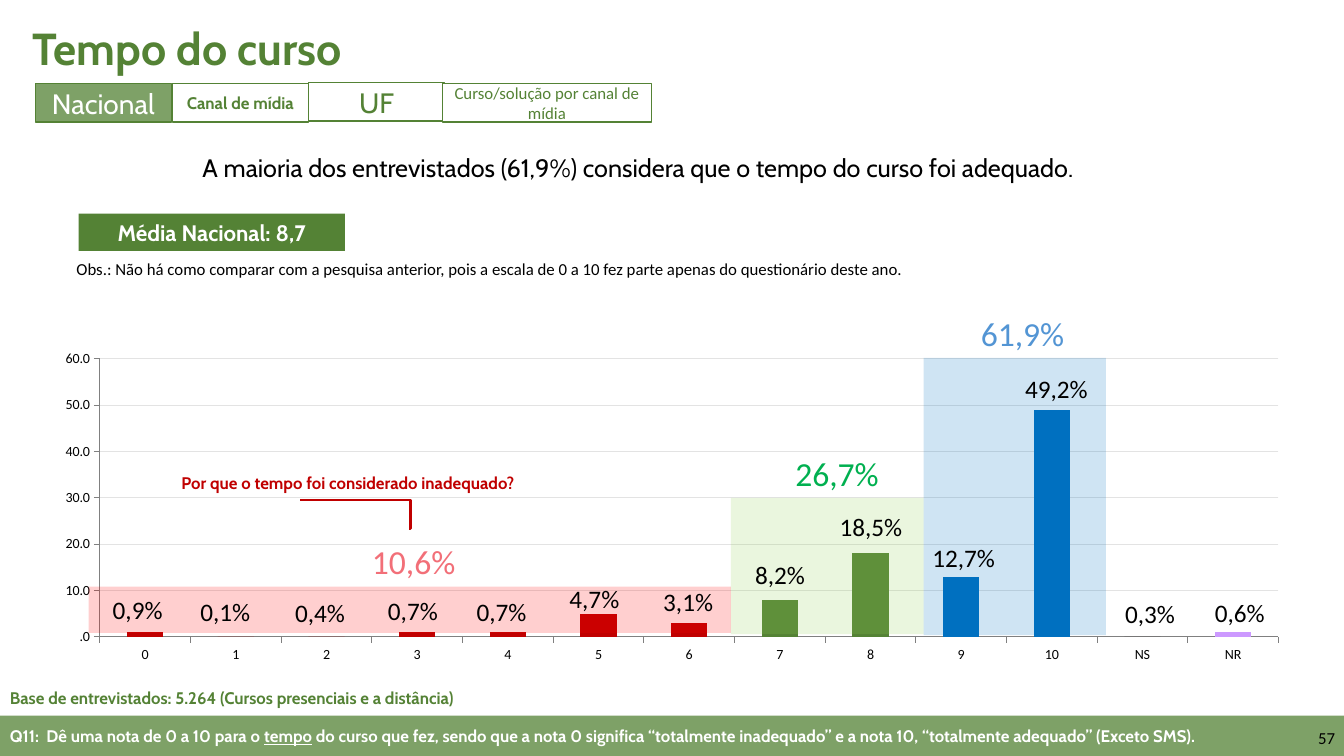
"""Build the slide on how respondents rated the length of the course."""
from lxml.etree import SubElement
from pptx import Presentation
from pptx.chart.data import CategoryChartData
from pptx.dml.color import RGBColor
from pptx.enum.chart import XL_CHART_TYPE, XL_TICK_MARK
from pptx.enum.shapes import MSO_CONNECTOR, MSO_SHAPE
from pptx.enum.text import MSO_ANCHOR, PP_ALIGN
from pptx.oxml import parse_xml
from pptx.oxml.ns import nsdecls, qn
from pptx.util import Emu, Pt

PX = 9144
BLACK = RGBColor(0x00, 0x00, 0x00)
WHITE = RGBColor(0xFF, 0xFF, 0xFF)
GREEN = RGBColor(0x54, 0x82, 0x35)
LIME = RGBColor(0x92, 0xD0, 0x50)
BRIGHT_GREEN = RGBColor(0x00, 0xB0, 0x50)
BLUE = RGBColor(0x00, 0x70, 0xC0)
SKY = RGBColor(0x53, 0x95, 0xD4)
RED = RGBColor(0xFF, 0x00, 0x00)
DARK_RED = RGBColor(0xC0, 0x00, 0x00)
PINK = RGBColor(0xF2, 0x6F, 0x78)
CHARCOAL = RGBColor(0x3B, 0x38, 0x38)
LILAC = RGBColor(0xCC, 0x99, 0xFF)
AXIS_GREY = RGBColor(0x80, 0x80, 0x80)
GRID_GREY = RGBColor(0xE3, 0xE3, 0xE3)

RATINGS = [
    ("0", 0.9, DARK_RED, 102, 585), ("1", 0.1, DARK_RED, 189, 587),
    ("2", 0.4, DARK_RED, 283, 588), ("3", 0.7, DARK_RED, 375, 586),
    ("4", 0.7, DARK_RED, 463, 587), ("5", 4.7, DARK_RED, 555, 574),
    ("6", 3.1, DARK_RED, 648, 577), ("7", 8.2, GREEN, 739, 550),
    ("8", 18.5, GREEN, 823, 502), ("9", 12.7, BLUE, 915, 533),
    ("10", 49.2, BLUE, 1007, 365), ("NS", 0.3, CHARCOAL, 1106, 589),
    ("NR", 0.6, LILAC, 1195, 588),
]
BANDS = [
    ((725, 494, 191, 135), LIME, "26,7%", (779, 444, 104, 50), BRIGHT_GREEN),
    ((916, 355, 181, 275), BLUE, "61,9%", (963, 306, 126, 50), SKY),
    ((88, 582, 637, 46), RED, "10,6%", (359, 532, 114, 50), PINK),
]
TABS = [
    ("Nacional", (35, 83, 135, 38), GREEN, 75, dict(size=20, color=WHITE)),
    ("UF", (306, 82, 135, 38), WHITE, 75, dict(size=20)),
    ("Canal de mídia", (171, 83, 135, 38), WHITE, 75, dict(size=12, bold=True)),
    ("Curso/solução por canal de mídia", (439, 83, 207, 38), WHITE, 100,
     dict(size=12, font="Calibri")),
]


def emu(*lengths):
    """Turn px lengths into EMU."""
    return [Emu(length * PX) for length in lengths]


def write(frame, text, size=12, color=BLACK, font="Cabin", bold=False,
          align=PP_ALIGN.LEFT, anchor=MSO_ANCHOR.TOP, wrap=True, underlined=None):
    """Fill a text frame, underlining one word where asked."""
    frame.word_wrap = wrap
    frame.vertical_anchor = anchor
    paragraph = frame.paragraphs[0]
    paragraph.alignment = align
    before, word, after = text.partition(underlined) if underlined else (text, "", "")
    for part in filter(None, (before, word, after)):
        run = paragraph.add_run()
        run.text = part
        run.font.size = Pt(size)
        run.font.name = font
        run.font.bold = bold
        run.font.color.rgb = color
        if part == underlined:
            run.font.underline = True


def add_text(slide, text, box, **text_format):
    """Add a text box."""
    write(slide.shapes.add_textbox(*emu(*box)).text_frame, text, **text_format)


def add_box(slide, box, fill, opacity=100, border=None):
    """Add a filled rectangle and return it."""
    rectangle = slide.shapes.add_shape(MSO_SHAPE.RECTANGLE, *emu(*box))
    rectangle.shadow.inherit = False
    rectangle.fill.solid()
    rectangle.fill.fore_color.rgb = fill
    if opacity < 100:
        tint = rectangle.fill._xPr.find(".//" + qn("a:srgbClr"))
        SubElement(tint, qn("a:alpha"), val=str(opacity * 1000))
    if border:
        rectangle.line.color.rgb = border
        rectangle.line.width = Pt(1)
    else:
        rectangle.line.fill.background()
    return rectangle


def add_elbow(slide, start, end, color, bend):
    """Add an elbow connector that turns at the given share of its width."""
    elbow = slide.shapes.add_connector(MSO_CONNECTOR.ELBOW, *emu(*start, *end))
    elbow.line.color.rgb = color
    elbow.line.width = Pt(2)
    properties = elbow._element.spPr
    SubElement(properties, qn("a:effectLst"))
    adjustments = properties.find(qn("a:prstGeom")).get_or_add_avLst()
    SubElement(adjustments, qn("a:gd"), name="adj1", fmla=f"val {round(bend * 100000)}")


def add_ratings_chart(slide, box):
    """Add the column chart with one colour per rating."""
    ratings = CategoryChartData()
    ratings.categories = [row[0] for row in RATINGS]
    ratings.add_series("Series 1", [round(row[1]) for row in RATINGS])
    chart = slide.shapes.add_chart(XL_CHART_TYPE.COLUMN_CLUSTERED, *emu(*box), ratings).chart
    chart.has_legend = False
    chart.has_title = False
    chart.font.size = Pt(10)
    chart.font.name = "Calibri"
    chart.font.color.rgb = BLACK
    plot = chart.plots[0]
    plot.gap_width = 150
    plot.vary_by_categories = False
    columns = plot.series[0]
    columns.format.fill.solid()
    columns.format.fill.fore_color.rgb = DARK_RED
    for index, (_, _, color, _, _) in enumerate(RATINGS):
        if color != DARK_RED:
            fill = columns.points[index].format.fill
            fill.solid()
            fill.fore_color.rgb = color
    for axis in (chart.category_axis, chart.value_axis):
        axis.major_tick_mark = XL_TICK_MARK.OUTSIDE
        axis.format.line.color.rgb = AXIS_GREY
    scale = chart.value_axis
    scale.minimum_scale, scale.maximum_scale, scale.major_unit = 0, 60, 10
    scale.tick_labels.number_format = "####.0"
    scale.tick_labels.number_format_is_linked = False
    scale.major_gridlines.format.line.color.rgb = GRID_GREY
    scale.major_gridlines.format.line.width = Pt(0.75)
    place_plot(chart, x=59 / 1253, y=15 / 323, w=1169 / 1253, h=276 / 323)


def place_plot(chart, **shares):
    """Fix the inner plot area as shares of the chart frame."""
    plot_area = chart._chartSpace.chart.plotArea
    for layout in plot_area.findall(qn("c:layout")):
        plot_area.remove(layout)
    modes = "".join(f'<c:{side}Mode val="edge"/>' for side in "xy")
    sizes = "".join(f'<c:{side} val="{share:.4f}"/>' for side, share in shares.items())
    plot_area.insert(0, parse_xml(
        f'<c:layout {nsdecls("c")}><c:manualLayout><c:layoutTarget val="inner"/>'
        f"{modes}{sizes}</c:manualLayout></c:layout>"))


def main():
    """Build and save the slide."""
    deck = Presentation()
    deck.slide_width, deck.slide_height = emu(1333, 750)
    slide = deck.slides.add_slide(deck.slide_layouts[5])
    title = slide.shapes.title
    title.left, title.top, title.width, title.height = emu(22, 11, 1298, 72)
    write(title.text_frame, "Tempo do curso", size=32, color=GREEN, bold=True,
          anchor=MSO_ANCHOR.MIDDLE)

    add_ratings_chart(slide, (40, 341, 1253, 323))
    for area, tint, total, total_box, color in BANDS:
        add_box(slide, area, tint, opacity=19)
        add_text(slide, total, total_box, size=24, color=color, font="Calibri")
    for _, value, _, left, top in RATINGS:
        add_text(slide, f"{value}%".replace(".", ","), (left, top, 97, 40),
                 size=18, font="Calibri")

    for label, box, fill, opacity, text_format in TABS:
        tab = add_box(slide, box, fill, opacity, border=GREEN)
        write(tab.text_frame, label, **{"color": GREEN, **text_format},
              align=PP_ALIGN.CENTER, anchor=MSO_ANCHOR.MIDDLE)

    add_text(slide, "A maioria dos entrevistados (61,9%) considera que o tempo do curso "
             "foi adequado.", (191, 146, 945, 40), size=18, align=PP_ALIGN.JUSTIFY)
    average = add_box(slide, (78, 212, 264, 37), GREEN)
    write(average.text_frame, "Média Nacional: 8,7", size=16, color=WHITE, bold=True,
          align=PP_ALIGN.CENTER)
    add_text(slide, "Obs.: Não há como comparar com a pesquisa anterior, pois a escala de "
             "0 a 10 fez parte apenas do questionário deste ano.", (66, 252, 850, 30),
             font="Calibri", wrap=False)
    add_text(slide, "Por que o tempo foi considerado inadequado?", (170, 464, 565, 30),
             color=DARK_RED, bold=True, align=PP_ALIGN.JUSTIFY)
    add_elbow(slide, (298, 496), (406, 524), DARK_RED, bend=1.01)

    add_text(slide, "Base de entrevistados: 5.264 (Cursos presenciais e a distância)",
             (0, 677, 476, 30), color=GREEN, bold=True, wrap=False)
    question = add_box(slide, (0, 710, 1333, 40), GREEN, opacity=75)
    write(question.text_frame, "Q11:  Dê uma nota de 0 a 10 para o tempo do curso que fez, "
          "sendo que a nota 0 significa “totalmente inadequado” e a nota 10, “totalmente "
          "adequado” (Exceto SMS).", color=WHITE, bold=True, anchor=MSO_ANCHOR.MIDDLE,
          underlined="tempo")
    add_text(slide, "57", (1288, 712, 46, 40), font="Calibri", align=PP_ALIGN.RIGHT,
             anchor=MSO_ANCHOR.MIDDLE)
    deck.save("out.pptx")


if __name__ == "__main__":
    main()
